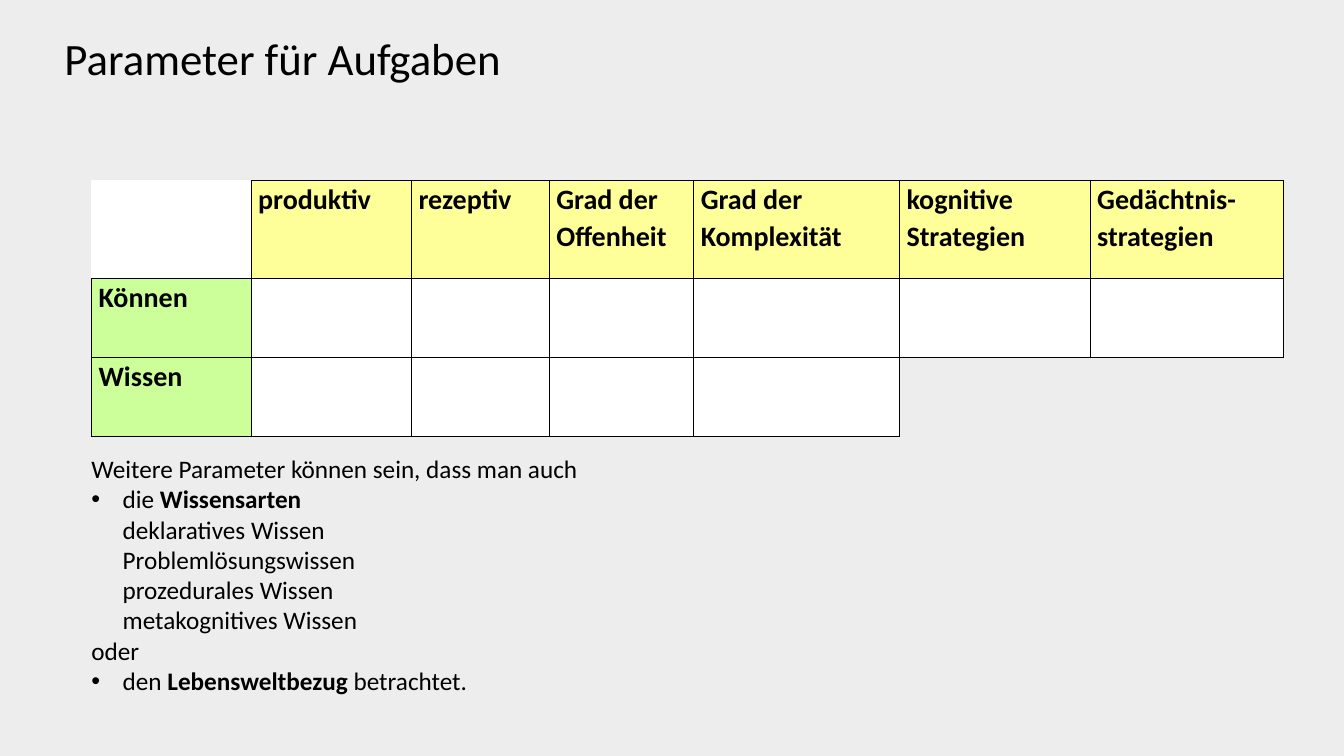
from dataclasses import dataclass

from lxml.etree import SubElement
from pptx import Presentation
from pptx.dml.color import RGBColor as RGB
from pptx.enum.text import MSO_ANCHOR as Anchor
from pptx.oxml import parse_xml
from pptx.oxml.ns import nsdecls, qn
from pptx.util import Emu, Inches, Pt


@dataclass(frozen=True)
class Theme:
    font: str = "Calibri"
    background: str = "EDEDED"
    ink: str = "000000"
    paper: str = "FFFFFF"
    header: str = "FFFF99"
    label: str = "CCFF99"
    title_size: int = 32
    table_size: int = 20
    body_size: int = 18


COLUMNS, ROWS = 16, 9
HEADERS = ["produktiv", "rezeptiv", "Grad der Offenheit", "Grad der Komplexität",
           "kognitive Strategien", "Gedächtnis-strategien"]
LABELS = ["Können", "Wissen"]
COLUMN_SPANS = [1.9, 1.91, 1.64, 1.72, 2.45, 2.27, 2.3]
ROW_SPANS = [1.17, 0.94, 0.94]
BODY = [
    (False, [("Weitere Parameter können sein, dass man auch", False)]),
    (True, [("die ", False), ("Wissensarten\n", True),
            ("deklaratives Wissen\nProblemlösungswissen\n"
             "prozedurales Wissen\nmetakognitives Wissen", False)]),
    (False, [("oder", False)]),
    (True, [("den ", False), ("Lebensweltbezug", True), (" betrachtet.", False)]),
]


class SlideBuilder:
    def __init__(self, prs, theme):
        self.theme = theme
        self.column = prs.slide_width / COLUMNS
        self.row = prs.slide_height / ROWS
        self.s = prs.slides.add_slide(prs.slide_layouts[6])
        fill = self.s.background.fill
        fill.solid()
        fill.fore_color.rgb = RGB.from_string(theme.background)

    def place(self, x, y, w, h):
        return [Emu(round(v)) for v in
                (x * self.column, y * self.row, w * self.column, h * self.row)]

    def run(self, p, text, size, bold=False):
        for i, line in enumerate(text.split("\n")):
            if i:
                p.add_line_break()
            if line:
                r = p.add_run()
                r.text = line
                r.font.name = self.theme.font
                r.font.size = Pt(size)
                r.font.bold = bold
                r.font.color.rgb = RGB.from_string(self.theme.ink)

    def bullet(self, p):
        pPr = p._p.get_or_add_pPr()
        pPr.set("marL", str(Inches(0.31)))
        pPr.set("indent", str(-Inches(0.31)))
        SubElement(pPr, qn("a:buFont")).set("typeface", "Arial")
        SubElement(pPr, qn("a:buChar")).set("char", "•")

    def text(self, box, paragraphs, size, anchor=Anchor.TOP, spacing=None):
        tf = self.s.shapes.add_textbox(*self.place(*box)).text_frame
        tf.word_wrap = True
        tf.vertical_anchor = anchor
        for i, (bulleted, runs) in enumerate(paragraphs):
            p = tf.add_paragraph() if i else tf.paragraphs[0]
            p.line_spacing = spacing
            if bulleted:
                self.bullet(p)
            for text, bold in runs:
                self.run(p, text, size, bold)

    def borders(self, cell, **sides):
        tcPr = cell._tc.get_or_add_tcPr()
        for i, side in enumerate("LRTB"):
            color = sides.get(side, self.theme.ink)
            paint = (f'<a:solidFill><a:srgbClr val="{color}"/></a:solidFill>'
                     if color else "<a:noFill/>")
            tcPr.insert(i, parse_xml(
                f'<a:ln{side} {nsdecls("a")} w="{Pt(1)}">{paint}</a:ln{side}>'))

    def cell(self, cell, text, color, **sides):
        cell.fill.solid()
        cell.fill.fore_color.rgb = RGB.from_string(color)
        cell.margin_left = cell.margin_right = Inches(0.07)
        cell.margin_top = cell.margin_bottom = 0
        p = cell.text_frame.paragraphs[0]
        p.line_spacing = 1.07
        p.space_after = Pt(4)
        self.run(p, text, self.theme.table_size, True)
        self.borders(cell, **sides)

    def table(self, x, y, headers, labels, column_spans, row_spans, blank_from):
        t = self.theme
        box = self.place(x, y, sum(column_spans), sum(row_spans))
        table = self.s.shapes.add_table(len(row_spans), len(column_spans), *box).table
        table.first_row = table.horz_banding = False
        for column, span in zip(table.columns, column_spans):
            column.width = Emu(round(span * self.column))
        for row, span in zip(table.rows, row_spans):
            row.height = Emu(round(span * self.row))
        last = len(row_spans) - 1
        for i in range(len(row_spans)):
            for j in range(len(column_spans)):
                cell = table.cell(i, j)
                if i == j == 0:
                    self.cell(cell, "", t.paper, L=t.paper, T=t.paper)
                elif i == 0:
                    self.cell(cell, headers[j - 1], t.header)
                elif j == 0:
                    self.cell(cell, labels[i - 1], t.label)
                elif i == last and j >= blank_from:
                    left = t.ink if j == blank_from else None
                    self.cell(cell, "", t.background, L=left, R=None, B=None)
                else:
                    self.cell(cell, "", t.paper)
        table.cell(last, blank_from).merge(table.cell(last, len(column_spans) - 1))


def main():
    prs = Presentation()
    prs.slide_width, prs.slide_height = Inches(13.33), Inches(7.5)
    theme = Theme()
    slide = SlideBuilder(prs, theme)
    slide.text((0.65, 0.34, 14.17, 0.76), [(False, [("Parameter für Aufgaben", False)])],
               theme.title_size, Anchor.MIDDLE, 0.9)
    slide.table(1.09, 2.15, HEADERS, LABELS, COLUMN_SPANS, ROW_SPANS, blank_from=5)
    slide.text((0.97, 5.34, 14.06, 3.02), BODY, theme.body_size)
    prs.save("out.pptx")


if __name__ == "__main__":
    main()
